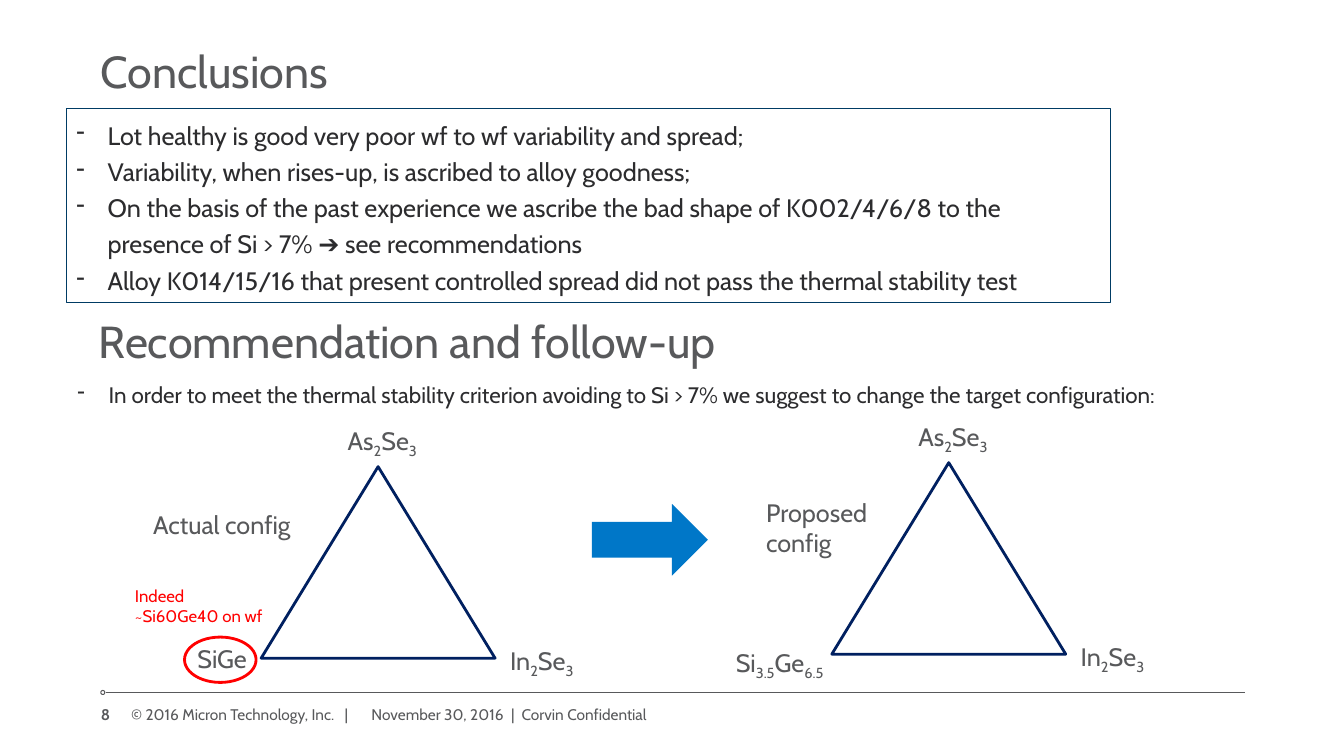
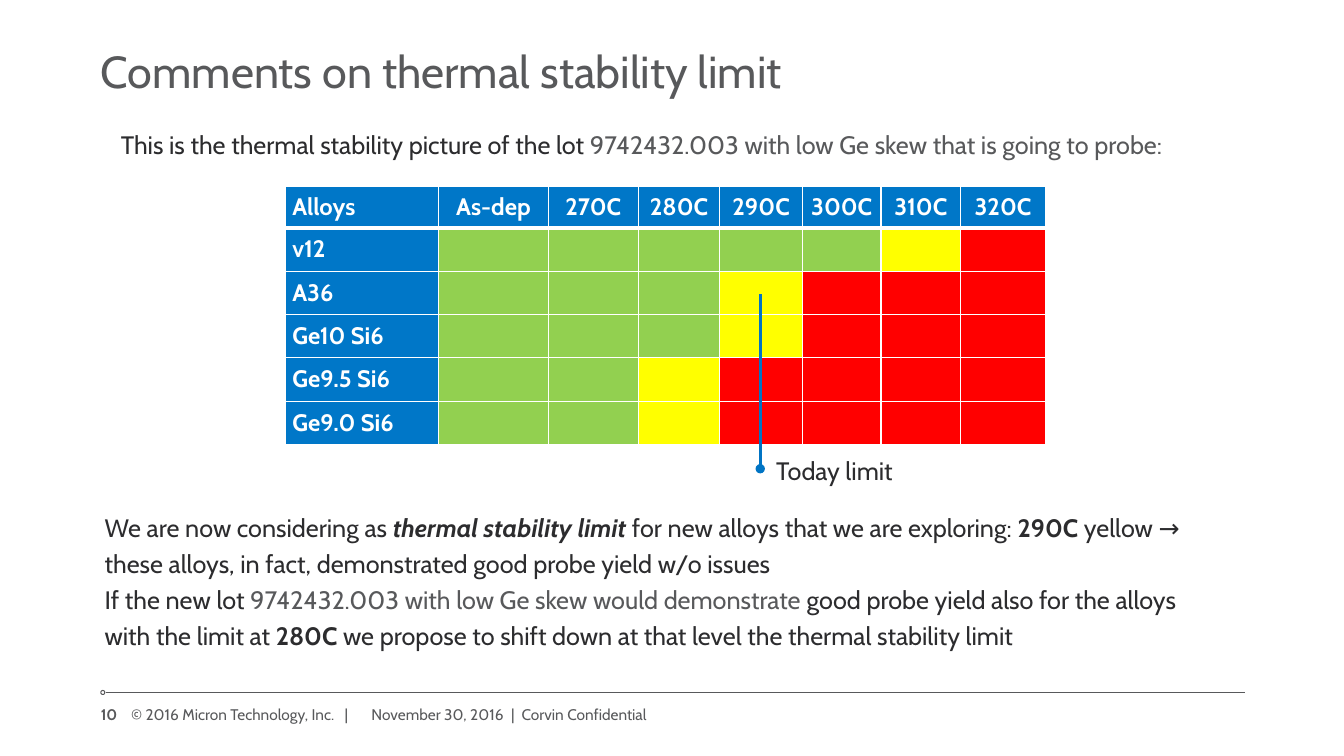
from lxml import etree
from pptx import Presentation
from pptx.dml.color import RGBColor
from pptx.enum.shapes import MSO_CONNECTOR, MSO_SHAPE
from pptx.enum.text import MSO_ANCHOR, PP_ALIGN
from pptx.oxml.ns import qn
from pptx.util import Inches, Pt

RECT, OVAL = MSO_SHAPE.RECTANGLE, MSO_SHAPE.OVAL
TRIANGLE, ARROW = MSO_SHAPE.ISOSCELES_TRIANGLE, MSO_SHAPE.RIGHT_ARROW
STRAIGHT = MSO_CONNECTOR.STRAIGHT
TOP, MIDDLE, BOTTOM = MSO_ANCHOR.TOP, MSO_ANCHOR.MIDDLE, MSO_ANCHOR.BOTTOM
LEFT, CENTER = PP_ALIGN.LEFT, PP_ALIGN.CENTER

FONT = "Cabin"
GRAY, DARK, WHITE = "58595B", "2C2C2E", "FFFFFF"
BLUE, NAVY, OUTLINE, LIMIT = "0077C8", "002060", "003B64", "0074C4"
GREEN, YELLOW, RED = "92D050", "FFFF00", "FF0000"
LEVELS = {"G": GREEN, "Y": YELLOW, "R": RED}
PADDING = (0.1, 0.05, 0.1, 0.05)


def rgb(value):
    return RGBColor.from_string(value)


def add_run(p, text, size=18, color=GRAY, bold=False, italic=False, sub=False):
    r = p.add_run()
    r.text = text
    r.font.name = FONT
    r.font.size = Pt(size)
    r.font.bold = bold
    r.font.italic = italic
    r.font.color.rgb = rgb(color)
    if sub:
        r.font._element.set("baseline", "-25000")


def add_dash(p):
    pPr = p._p.get_or_add_pPr()
    pPr.set("marL", str(Inches(0.31)))
    pPr.set("indent", str(-Inches(0.31)))
    etree.SubElement(pPr, qn("a:buChar")).set("char", "-")


def write(tf, paragraphs, align=LEFT, spacing=None, dash=False, **fmt):
    if isinstance(paragraphs, str):
        paragraphs = [[paragraphs]]
    for i, runs in enumerate(paragraphs):
        p = tf.paragraphs[0] if i == 0 else tf.add_paragraph()
        if dash:
            add_dash(p)
        p.alignment = align
        if spacing:
            p.line_spacing = spacing
        for part in runs:
            text, extra = (part, {}) if isinstance(part, str) else part
            add_run(p, text, **{**fmt, **extra})


def set_frame(tf, anchor=TOP, padding=PADDING, wrap=True):
    tf.word_wrap = wrap
    tf.vertical_anchor = anchor
    tf.margin_left, tf.margin_top, tf.margin_right, tf.margin_bottom = map(Inches, padding)


def add_text(s, box, text, anchor=TOP, padding=PADDING, wrap=True, **fmt):
    tf = s.shapes.add_textbox(*map(Inches, box)).text_frame
    set_frame(tf, anchor, padding, wrap)
    write(tf, text, **fmt)


def add_shape(s, kind, box, fill=None, line=None, width=0.75):
    sp = s.shapes.add_shape(kind, *map(Inches, box))
    sp.shadow.inherit = False
    if fill:
        sp.fill.solid()
        sp.fill.fore_color.rgb = rgb(fill)
    else:
        sp.fill.background()
    if line:
        sp.line.color.rgb = rgb(line)
        sp.line.width = Pt(width)
    else:
        sp.line.fill.background()
    return sp


def add_line(s, x1, y1, x2, y2, color, width, tail=None):
    cn = s.shapes.add_connector(STRAIGHT, *map(Inches, (x1, y1, x2, y2)))
    cn.line.color.rgb = rgb(color)
    cn.line.width = Pt(width)
    if tail:
        etree.SubElement(cn.line._get_or_add_ln(), qn("a:tailEnd")).set("type", tail)
    etree.SubElement(cn._element.spPr, qn("a:effectLst"))


def add_title(s, x, y, text):
    add_text(s, (x, y, 11.35, 1.02), text, anchor=BOTTOM, padding=(0, 0, 0, 0.05), size=32)


def add_footer(s, number):
    add_shape(s, OVAL, (1, 6.85, 0.04, 0.04), line=GRAY)
    add_line(s, 1.05, 6.87, 12.35, 6.87, GRAY, 0.75)
    for x, w, text, wrap, fmt in (
        (1, 0.3, number, False, {"bold": True}),
        (1.3, 2.36, "© 2016 Micron Technology, Inc.   |", False, {}),
        (3.6, 1.48, "November 30, 2016", True, {"align": CENTER}),
        (5.07, 1.53, "|  Corvin Confidential", True, {}),
    ):
        add_text(s, (x, 6.96, w, 0.25), text, anchor=MIDDLE, padding=(0, 0, 0, 0),
                 wrap=wrap, size=11, **fmt)


def add_slide(prs, title, number):
    s = prs.slides.add_slide(prs.slide_layouts[6])
    add_title(s, 1, 0, title)
    add_footer(s, number)
    return s


def formula(*parts):
    return [[(text, {"sub": i % 2 == 1}) for i, text in enumerate(parts)]]


def add_config(s, x, y, caption, caption_at, corner, corner_at):
    add_shape(s, TRIANGLE, (x, y, 2.32, 1.9), line=NAVY, width=2)
    for dx, dy, w, h, text in (
        (0.76, -0.46, 1.01, 0.4, formula("As", "2", "Se", "3")),
        (2.37, 1.72, 0.91, 0.4, formula("In", "2", "Se", "3")),
        (*corner_at, 1.22, 0.4, corner),
        (*caption_at, 1.62, 0.71, caption),
    ):
        add_text(s, (x + dx, y + dy, w, h), text)


def set_border(cell, side, width):
    ln = etree.SubElement(cell._tc.get_or_add_tcPr(), qn(f"a:{side}"), w=str(Pt(width)))
    fill = etree.SubElement(ln, qn("a:solidFill"))
    etree.SubElement(fill, qn("a:srgbClr")).set("val", WHITE)


def style_cell(cell, fill, bottom=1):
    for side, width in (("lnL", 1), ("lnR", 1), ("lnT", 1), ("lnB", bottom)):
        set_border(cell, side, width)
    cell.fill.solid()
    cell.fill.fore_color.rgb = rgb(fill)
    cell.vertical_anchor = MIDDLE
    cell.margin_left = cell.margin_right = Inches(0.07)
    cell.margin_top = cell.margin_bottom = 0


def add_stability_table(s, x, y):
    header = ["Alloys", "As-dep", "270C", "280C", "290C", "300C", "310C", "320C"]
    alloys = [("v12", "GGGGGYR"), ("A36", "GGGYRRR"), ("Ge10 Si6", "GGGYRRR"),
              ("Ge9.5 Si6", "GGYRRRR"), ("Ge9.0 Si6", "GGYRRRR")]
    widths = [1.52, 1.09, 0.89, 0.81, 0.82, 0.78, 0.79, 0.84]
    heights = [0.41] + [0.43] * len(alloys)
    table = s.shapes.add_table(len(heights), len(widths), Inches(x), Inches(y),
                               Inches(sum(widths)), Inches(sum(heights))).table
    table.first_row = table.horz_banding = False
    for column, w in zip(table.columns, widths):
        column.width = Inches(w)
    for row, h in zip(table.rows, heights):
        row.height = Inches(h)
    label = {"size": 17, "color": WHITE, "bold": True}
    for c, text in enumerate(header):
        cell = table.cell(0, c)
        style_cell(cell, BLUE, bottom=3)
        write(cell.text_frame, text, align=CENTER if c else LEFT, **label)
    for i, (alloy, levels) in enumerate(alloys, 1):
        style_cell(table.cell(i, 0), BLUE)
        write(table.cell(i, 0).text_frame, alloy, **label)
        for c, level in enumerate(levels, 1):
            style_cell(table.cell(i, c), LEVELS[level])


def build_conclusions(prs):
    s = add_slide(prs, "Conclusions", "8")
    sp = add_shape(s, RECT, (0.66, 1.08, 10.35, 1.92), line=OUTLINE)
    set_frame(sp.text_frame)
    write(sp.text_frame, [
        ["Lot healthy is good very poor wf to wf variability and spread;"],
        ["Variability, when rises-up, is ascribed to alloy goodness;"],
        ["On the basis of the past experience we ascribe the bad shape of K002/4/6/8 "
         "to the presence of Si > 7% ➔ see recommendations"],
        ["Alloy K014/15/16 that present controlled spread did not pass the thermal stability test"],
    ], dash=True, spacing=1.2, color=DARK)
    add_title(s, 0.98, 2.67, "Recommendation and follow-up")
    add_text(s, (0.67, 3.73, 11.9, 0.37),
             "In order to meet the thermal stability criterion avoiding to Si > 7% "
             "we suggest to change the target configuration:",
             dash=True, size=16, color=DARK)
    add_config(s, 2.59, 4.63, "Actual config", (-1.17, 0.37), "SiGe", (-0.73, 1.7))
    add_config(s, 8.25, 4.59, "Proposed config", (-0.75, 0.29),
               formula("Si", "3.5", "Ge", "6.5"), (-1.05, 1.78))
    add_shape(s, ARROW, (5.87, 5, 1.15, 0.71), fill=BLUE)
    add_shape(s, OVAL, (1.83, 6.32, 0.71, 0.45), line=RED, width=2)
    add_text(s, (1.24, 5.76, 1.48, 0.5), "Indeed ~Si60Ge40 on wf", size=12, color=RED)


def build_comments(prs):
    s = add_slide(prs, "Comments on thermal stability limit", "10")
    gray, bold = {"color": GRAY}, {"bold": True}
    add_text(s, (1.1, 1.23, 11, 0.4), [[
        "This is the thermal stability picture of the lot ",
        ("9742432.003 with low Ge skew that is going to probe:", gray),
    ]], color=DARK)
    add_stability_table(s, 2.83, 1.85)
    add_line(s, 7.54, 2.92, 7.54, 4.65, LIMIT, 2.25, tail="oval")
    add_text(s, (7.6, 4.47, 1.41, 0.4), "Today limit", wrap=False, color=DARK)
    add_text(s, (0.94, 4.97, 11.33, 1.56), [
        ["We are now considering as ",
         ("thermal stability limit", {"bold": True, "italic": True}),
         " for new alloys that we are exploring: ", ("290C", bold),
         " yellow → these alloys, in fact, demonstrated good probe yield w/o issues"],
        ["If the new lot ", ("9742432.003 with low Ge skew would demonstrate ", gray),
         "good probe yield also for the alloys with the limit at ", ("280C", bold),
         " we propose to shift down at that level the thermal stability limit"],
    ], spacing=1.2, color=DARK)


def main():
    prs = Presentation()
    prs.slide_width, prs.slide_height = Inches(13.33), Inches(7.5)
    build_conclusions(prs)
    build_comments(prs)
    prs.save("out.pptx")


if __name__ == "__main__":
    main()
